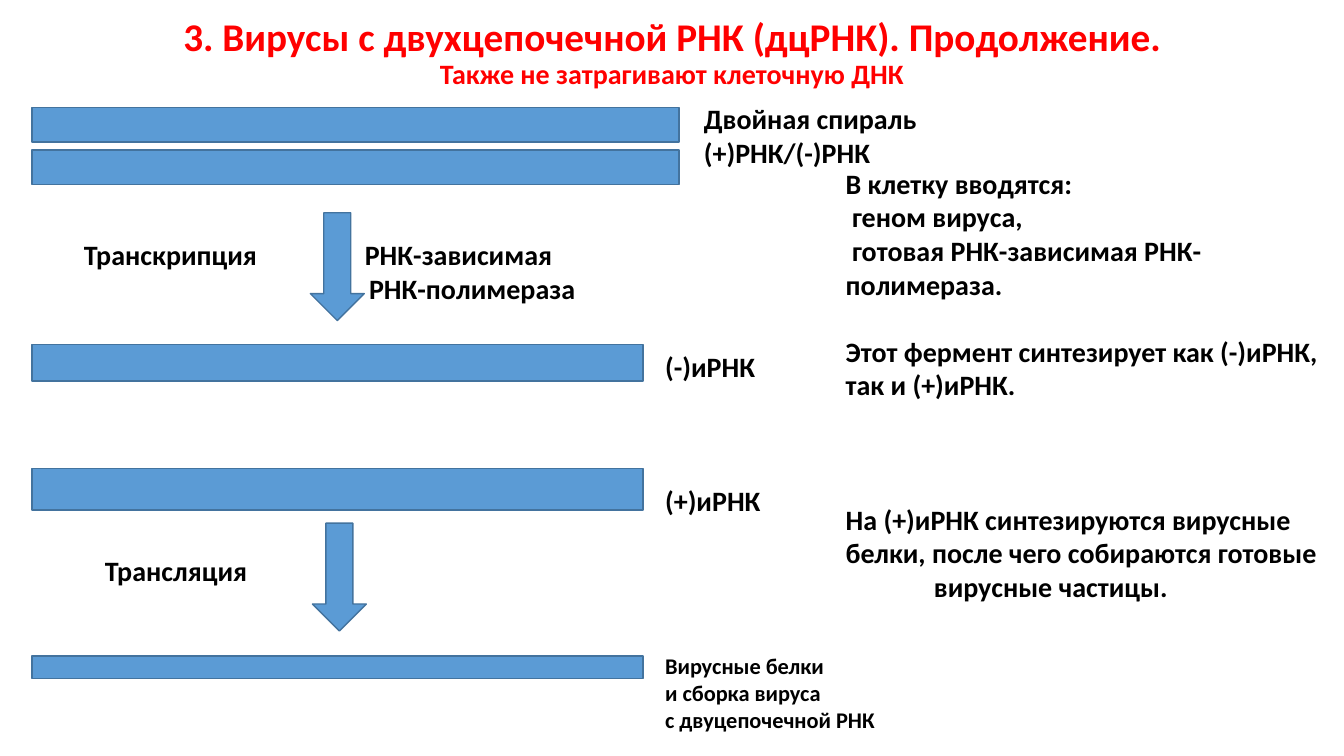
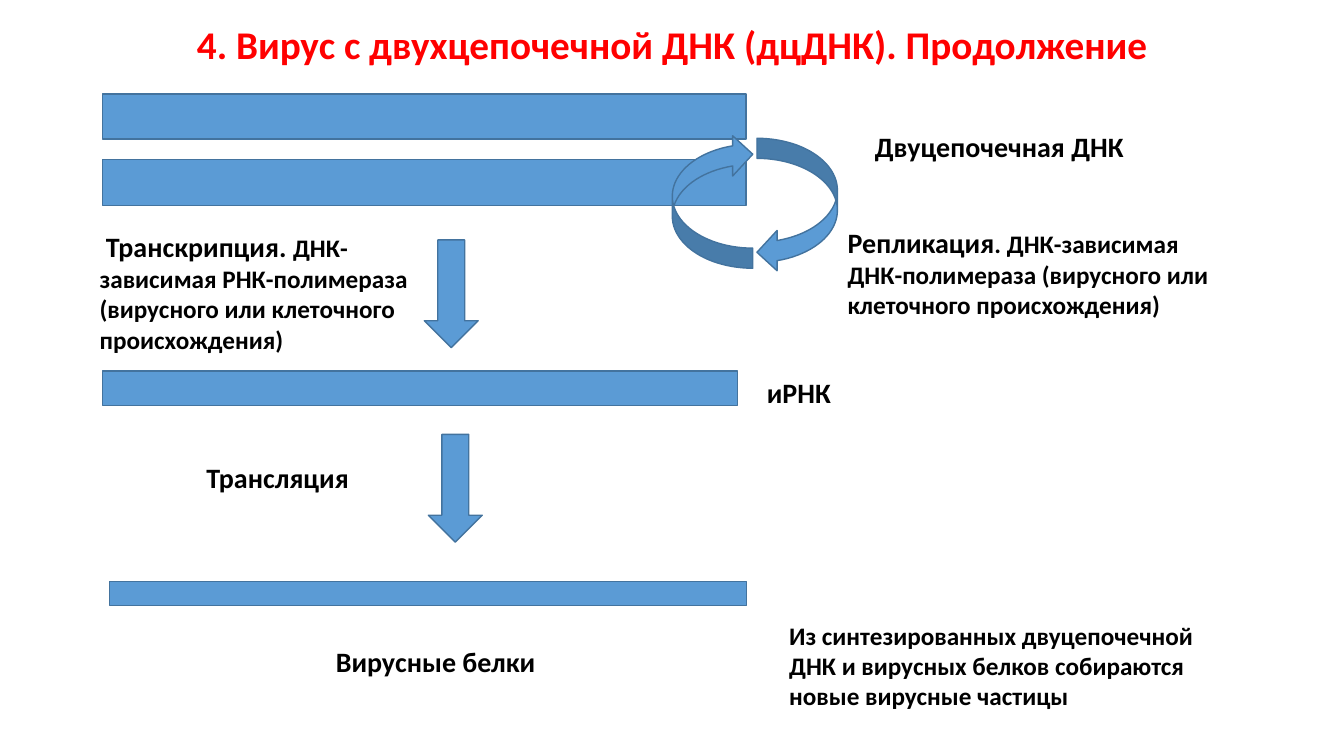
import dataclasses

import pptx
import pptx.dml.color
import pptx.enum.shapes
import pptx.enum.text
import pptx.util

Pt = pptx.util.Pt
SHAPES = pptx.enum.shapes.MSO_SHAPE
ALIGN = pptx.enum.text.PP_ALIGN
ANCHOR = pptx.enum.text.MSO_ANCHOR

FONT = "Calibri"
TITLE_COLOR = "FF0000"
TEXT_COLOR = "000000"
FILL_COLOR = "5B9BD5"
LINE_COLOR = "43739E"
TITLE_SIZE, LABEL_SIZE, DETAIL_SIZE, SMALL_SIZE = 28, 20, 18, 16
ARROW_WIDTH, ARROW_HEIGHT = 38.5, 77
LABEL_HEIGHT = 32


@dataclasses.dataclass
class Line:
    """A paragraph of (text, size) runs with its own first-line indent and gap."""
    runs: list
    indent: float = 0
    before: float = 0


def color(hex_string):
    """Turn a hex string into a colour."""
    return pptx.dml.color.RGBColor.from_string(hex_string)


def add_text(slide, left, top, width, height, lines, size=LABEL_SIZE, fill=TEXT_COLOR,
             align=ALIGN.LEFT, anchor=ANCHOR.TOP, spacing=1.0, wrap=True):
    """Place bold text; each line is a string or a Line."""
    frame = slide.shapes.add_textbox(Pt(left), Pt(top), Pt(width), Pt(height)).text_frame
    frame.word_wrap = wrap
    frame.vertical_anchor = anchor
    for number, line in enumerate(lines):
        if isinstance(line, str):
            line = Line([(line, size)])
        paragraph = frame.add_paragraph() if number else frame.paragraphs[0]
        paragraph.alignment = align
        paragraph.line_spacing = spacing
        paragraph.space_before = Pt(line.before)
        if line.indent:
            paragraph._p.get_or_add_pPr().set("indent", str(Pt(line.indent)))
        for text, run_size in line.runs:
            run = paragraph.add_run()
            run.text = text
            run.font.name = FONT
            run.font.size = Pt(run_size)
            run.font.bold = True
            run.font.color.rgb = color(fill)


def add_label(slide, left, top, text):
    """Place a one-line label."""
    add_text(slide, left, top, 290, LABEL_HEIGHT, [text], wrap=False)


def add_block(slide, kind, left, top, width, height, rotation=0):
    """Place a blue preset shape."""
    shape = slide.shapes.add_shape(kind, Pt(left), Pt(top), Pt(width), Pt(height))
    shape.shadow.inherit = False
    shape.fill.solid()
    shape.fill.fore_color.rgb = color(FILL_COLOR)
    shape.line.color.rgb = color(LINE_COLOR)
    shape.line.width = Pt(1)
    shape.rotation = rotation


def add_title(slide, top, height, lines):
    """Place the centred red title."""
    add_text(slide, 66, top, 828, height, lines, size=TITLE_SIZE, fill=TITLE_COLOR,
             align=ALIGN.CENTER, anchor=ANCHOR.MIDDLE, spacing=0.9)


def add_scheme(slide, left, top, strands, arrows, labels):
    """Place strands, down arrows and labels relative to the scheme's corner."""
    for x, y, width, height in strands:
        add_block(slide, SHAPES.RECTANGLE, left + x, top + y, width, height)
    for x, y in arrows:
        add_block(slide, SHAPES.DOWN_ARROW, left + x, top + y, ARROW_WIDTH, ARROW_HEIGHT)
    for x, y, text in labels:
        add_label(slide, left + x, top + y, text)


def add_replication_cycle(slide, left, top, width, height):
    """Place two curved arrows that form a loop in the given box."""
    arrow_width, arrow_height = width - 60.5, height - 3
    add_block(slide, SHAPES.CURVED_LEFT_ARROW, left + 60.5, top + 3, arrow_width, arrow_height)
    add_block(slide, SHAPES.CURVED_LEFT_ARROW, left, top, arrow_width, arrow_height, rotation=180)


def add_rna_slide(slide):
    """Build the slide on viruses with double-stranded RNA."""
    add_title(slide, 6.5, 64, [
        "3. Вирусы с двухцепочечной РНК (дцРНК). Продолжение.",
        Line([("Также не затрагивают клеточную ДНК", LABEL_SIZE)]),
    ])
    left, top = 23, 77
    strands = [(0, 0, 462, 24.5), (0, 30.3, 462, 24.5), (0, 169.2, 436.3, 26),
               (0, 257.8, 436.3, 29.5), (0, 391.7, 436.3, 16)]
    labels = [(472.7, -7.8, "Двойная спираль  (+)РНК/(-)РНК"), (29.8, 89.3, "Транскрипция"),
              (445, 169.2, "(-)иРНК"), (445, 265, "(+)иРНК"), (44.8, 314.7, "Трансляция")]
    add_scheme(slide, left, top, strands, [(198.7, 75), (200.2, 296.7)], labels)
    add_text(slide, left + 230.5, top + 89.3, 190, 56, [
        "РНК-зависимая", Line([("РНК-полимераза", LABEL_SIZE)], indent=3),
    ])
    add_text(slide, left + 445, top + 385.2, 175, 66, [
        "Вирусные белки", "и сборка вируса", "с двуцепочечной РНК",
    ], size=SMALL_SIZE)
    add_text(slide, 597, 115.2, 353, 322, [
        "В клетку вводятся:",
        Line([("геном вируса,", LABEL_SIZE)], indent=4.5),
        Line([("готовая РНК-зависимая РНК-полимераза.", LABEL_SIZE)], indent=4.5),
        Line([("Этот фермент синтезирует как (-)иРНК, так и (+)иРНК.", LABEL_SIZE)], before=24),
        Line([("На (+)иРНК синтезируются вирусные белки, после чего собираются готовые",
               LABEL_SIZE)], before=72),
        Line([("вирусные частицы.", LABEL_SIZE)], indent=63),
    ])


def add_dna_slide(slide):
    """Build the slide on the virus with double-stranded DNA."""
    add_title(slide, 0, 67, ["4. Вирус с двухцепочечной ДНК (дцДНК). Продолжение"])
    left, top = 73.4, 67
    strands = [(0, 0, 459.4, 32.4), (0, 46.8, 459.4, 33.1),
               (0, 198, 453.6, 24.5), (5, 348.4, 455, 17.3)]
    labels = [(544.4, 21.6, "Двуцепочечная ДНК"), (467.3, 198, "иРНК"),
              (67, 258.4, "Трансляция"), (159.4, 389.5, "Вирусные белки")]
    add_scheme(slide, left, top, strands, [(229.7, 104.4), (232.6, 243.3)], labels)
    add_replication_cycle(slide, left + 406.8, top + 28.8, 118, 98.8)
    add_text(slide, left - 9.3, top + 93.6, 242, 97, [
        Line([("Транскрипция. ", LABEL_SIZE),
              ("ДНК-зависимая РНК-полимераза (вирусного или клеточного происхождения)",
               DETAIL_SIZE)], indent=4.5),
    ])
    add_text(slide, 598.3, 157.7, 286.6, 75, [
        Line([("Репликация", LABEL_SIZE), (". ДНК-зависимая", DETAIL_SIZE)]),
        Line([("ДНК-полимераза (вирусного или клеточного происхождения)", DETAIL_SIZE)]),
    ])
    add_text(slide, 556.6, 439.2, 328.3, 73, [
        "Из синтезированных двуцепочечной ДНК и вирусных белков собираются "
        "новые вирусные частицы",
    ], size=DETAIL_SIZE)


def main():
    """Build and save the presentation."""
    presentation = pptx.Presentation()
    presentation.slide_width, presentation.slide_height = Pt(960), Pt(540)
    for build in (add_rna_slide, add_dna_slide):
        build(presentation.slides.add_slide(presentation.slide_layouts[6]))
    presentation.save("out.pptx")


if __name__ == "__main__":
    main()
